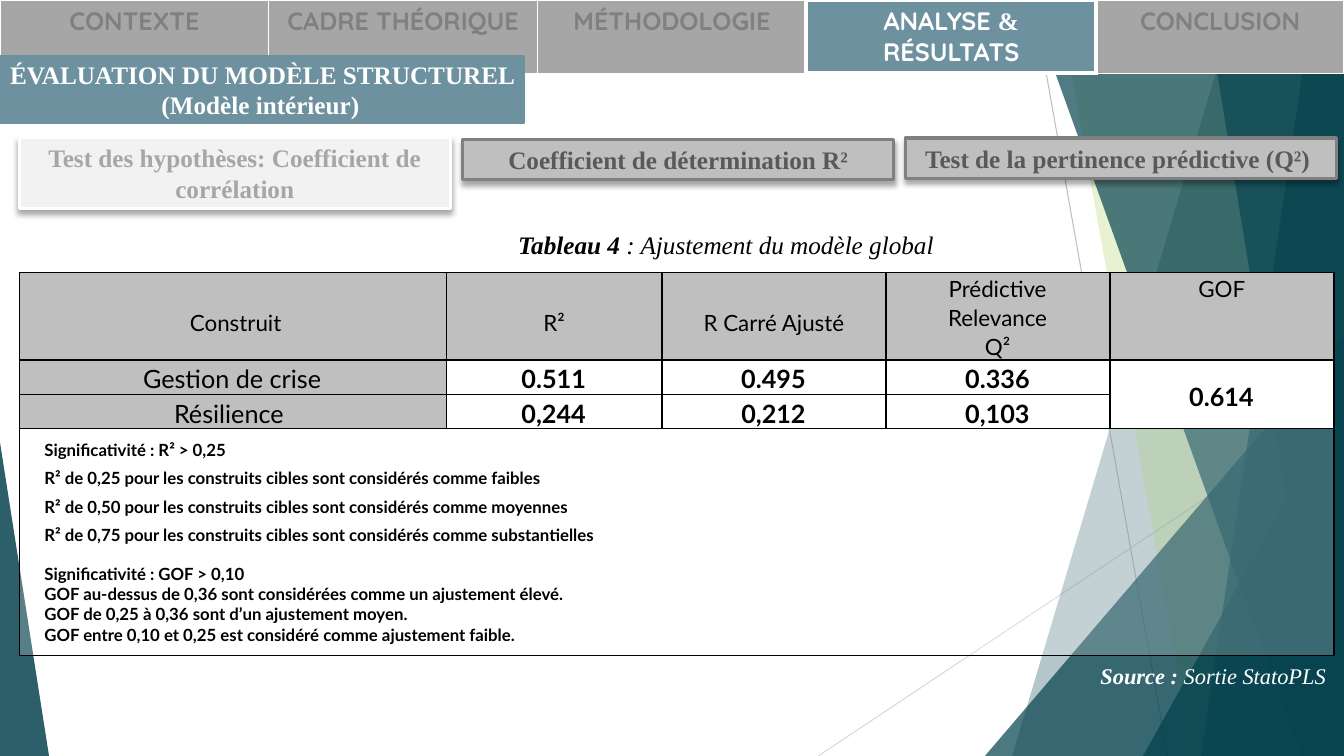
from collections import namedtuple

from lxml.etree import SubElement
from pptx import Presentation
from pptx.dml.color import RGBColor
from pptx.enum.shapes import MSO_CONNECTOR as Connector, MSO_SHAPE as Shape
from pptx.enum.text import MSO_ANCHOR as Anchor, MSO_AUTO_SIZE as AutoSize, PP_ALIGN as Align
from pptx.oxml.ns import qn
from pptx.util import Pt

Box = namedtuple("Box", "left top width height")

COLOURS = {
    "white": "FFFFFF", "black": "000000", "teal": "084450", "lime": "90C226",
    "slate": "6E91A0", "tab": "A6A6A6", "tab_text": "808080", "pale": "F2F2F2",
    "silver": "BFBFBF", "charcoal": "595959", "hairline": "D9D9D9",
}
SERIF, SANS, ROUNDED = "Times New Roman", "Lato", "Quicksand"
NUMBER_INSETS = (9.4, 1.4, 5.8, 0)


def rgb(name):
    return RGBColor.from_string(COLOURS[name])


def in_points(box):
    return [Pt(value) for value in box]


def write(frame, paragraphs, font=SERIF, size=18, colour="black", bold=False, italic=False,
          align=Align.LEFT, spacing=None, after=0):
    """Each paragraph is a string or a list of (text, overrides) pairs."""
    for index, content in enumerate(paragraphs):
        para = frame.paragraphs[0] if index == 0 else frame.add_paragraph()
        para.alignment = align
        para.space_before, para.space_after = Pt(0), Pt(after)
        if spacing:
            para.line_spacing = spacing
        spans = [(content, {})] if isinstance(content, str) else content
        for text, changes in spans:
            span = para.add_run()
            span.text = text
            span.font.name = changes.get("font", font)
            span.font.size = Pt(size)
            span.font.bold = changes.get("bold", bold)
            span.font.italic = italic
            span.font.color.rgb = rgb(colour)


def set_insets(target, left=7.2, top=3.6, right=7.2, bottom=3.6):
    target.margin_left, target.margin_top = Pt(left), Pt(top)
    target.margin_right, target.margin_bottom = Pt(right), Pt(bottom)


def paint(fill, properties, colour, alpha=100):
    fill.solid()
    fill.fore_color.rgb = rgb(colour)
    if alpha < 100:
        tint = properties.find(qn("a:solidFill"))[0]
        SubElement(tint, qn("a:alpha"), val=str(alpha * 1000))


def set_borders(cell, colour, **widths):
    properties = cell._tc.get_or_add_tcPr()
    for side in "LRTB":
        line = SubElement(properties, qn(f"a:ln{side}"), w=str(Pt(widths.get(side, 1))))
        solid = SubElement(line, qn("a:solidFill"))
        SubElement(solid, qn("a:srgbClr"), val=COLOURS[colour])


def add_grid(page, box, widths, heights):
    frame = page.shapes.add_table(len(heights), len(widths), *in_points(box))
    table = frame.table
    table.first_row = table.horz_banding = False
    for column, width in zip(table.columns, widths):
        column.width = Pt(width)
    for row, height in zip(table.rows, heights):
        row.height = Pt(height)
    return table


# Background facets
def draw_facets(page, box):
    right, bottom = box.left + box.width, box.top + box.height
    for start, end, colour in [((738, 0), (834, 540), "silver"),
                               ((960, 290), (584.5, 540), "hairline")]:
        line = page.shapes.add_connector(
            Connector.STRAIGHT, *[Pt(value) for value in (*start, *end)])
        line.line.color.rgb = rgb(colour)
        line.line.width = Pt(0.75)
        SubElement(line._element.spPr, qn("a:effectLst"))

    def finish(facet, colour, alpha):
        facet.shadow.inherit = False
        paint(facet.fill, facet._element.spPr, colour, alpha)
        facet.line.fill.background()

    def shard(top_x, bottom_x, colour, alpha):
        outline = page.shapes.build_freeform(Pt(top_x), Pt(box.top))
        outline.add_line_segments([(Pt(right), Pt(box.top)), (Pt(right), Pt(bottom)),
                                   (Pt(bottom_x), Pt(bottom))], close=True)
        finish(outline.convert_to_shape(), colour, alpha)

    def corner(left, top, width, apex, alpha):
        place = in_points(Box(left, top, width, bottom - top))
        facet = page.shapes.add_shape(Shape.ISOSCELES_TRIANGLE, *place)
        facet.adjustments[0] = apex
        finish(facet, "teal", alpha)

    shard(884, 723, "teal", 30)
    shard(756, 852, "lime", 20)
    corner(703.5, 240, right - 703.5, 1, 72)
    shard(735, 929.5, "teal", 70)
    shard(938, 858, "teal", 70)
    shard(861, 949, "teal", 65)
    corner(816.5, 283, right - 816.5, 1, 80)
    corner(box.left, 316, 35, 0, 85)


# Navigation bar
def draw_navigation(page, box, active):
    tabs = ["CONTEXTE", "CADRE THÉORIQUE", "MÉTHODOLOGIE",
            [("ANALYSE ", {}), ("& ", {"font": SERIF}), ("RÉSULTATS", {})], "CONCLUSION"]
    table = add_grid(page, box, [192, 192, 192, 207, 177], [box.height])
    for index, label in enumerate(tabs):
        cell = table.cell(0, index)
        chosen = index == active
        edge = 3 if chosen else 1
        set_borders(cell, "white", T=edge, B=edge,
                    L=3 if index in (active, active + 1) else 1,
                    R=3 if index in (active - 1, active) else 1)
        paint(cell.fill, cell._tc.tcPr, "slate" if chosen else "tab")
        write(cell.text_frame, [label], font=ROUNDED, bold=True, align=Align.CENTER,
              colour="white" if chosen else "tab_text")


# Slide title
def draw_title(page, box):
    title = page.shapes.title
    page.shapes._spTree.append(title._element)
    title.left, title.top, title.width, title.height = in_points(box)
    paint(title.fill, title._element.spPr, "slate")
    title.line.color.rgb = rgb("slate")
    title.line.width = Pt(1.5)
    frame = title.text_frame
    frame.word_wrap, frame.auto_size = True, AutoSize.NONE
    frame.vertical_anchor = Anchor.MIDDLE
    set_insets(frame, right=5)
    write(frame, ["ÉVALUATION DU MODÈLE STRUCTUREL", "(Modèle intérieur) "],
          colour="white", bold=True)
    frame.paragraphs[1].alignment = Align.CENTER


# Test headings
def draw_heading(page, box, text, fill="silver", line="tab_text", colour="charcoal"):
    heading = page.shapes.add_shape(Shape.RECTANGLE, *in_points(box))
    heading.shadow.inherit = False
    paint(heading.fill, heading._element.spPr, fill)
    heading.line.color.rgb = rgb(line)
    heading.line.width = Pt(2.25)
    effects = heading._element.spPr.find(qn("a:effectLst"))
    shadow = SubElement(effects, qn("a:outerShdw"), blurRad=str(Pt(4)), dist=str(Pt(3)),
                        dir="5400000", algn="t", rotWithShape="0")
    tint = SubElement(shadow, qn("a:srgbClr"), val=COLOURS["black"])
    SubElement(tint, qn("a:alpha"), val="35000")
    frame = heading.text_frame
    frame.word_wrap, frame.vertical_anchor = True, Anchor.MIDDLE
    write(frame, [text], colour=colour, bold=True, align=Align.CENTER)


# Model fit table
def draw_fit_table(page, box):
    rows = [
        [[" Construit"], ["R²"], ["R Carré Ajusté"],
         ["Prédictive ", "Relevance ", "Q² "], ["GOF "]],
        [["Gestion de crise "], ["0.511 "], ["0.495 "], ["0.336 "], ["0.614 "]],
        [["Résilience  "], ["0,244 "], ["0,212 "], ["0,103 "], []],
        [["Significativité : R² > 0,25",
          "R² de 0,25 pour les construits cibles sont considérés comme faibles",
          "R² de 0,50 pour les construits cibles sont considérés comme moyennes",
          "R² de 0,75 pour les construits cibles sont considérés comme substantielles",
          "Significativité : GOF > 0,10",
          "GOF au-dessus de 0,36 sont considérées comme un ajustement élevé.",
          "GOF de 0,25 à 0,36 sont d’ajustement moyen.".replace("d’", "d’un "),
          "GOF entre 0,10 et 0,25 est considéré comme ajustement faible."], [], [], [], []],
    ]
    table = add_grid(page, box, [305.2, 154, 160, 160, 160], [62.8, 24.5, 24.5, 162])
    table.cell(1, 4).merge(table.cell(2, 4))
    table.cell(3, 0).merge(table.cell(3, 4))
    for y, row in enumerate(rows):
        for x, lines in enumerate(row):
            cell = table.cell(y, x)
            header, notes = y == 0, y == 3
            set_borders(cell, "black", T=2 if y == 1 else 1, B=2 if header else 1)
            grey = header or (x == 0 and not notes)
            paint(cell.fill, cell._tc.tcPr, "silver" if grey else "white", 20 if notes else 100)
            if notes:
                set_insets(cell, 18, 0, 3.6, 0)
                style = {"size": 12, "bold": True}
            elif header and x < 3:
                set_insets(cell, 3.6, 0, 3.6, 0)
                style = {"size": 16, "align": Align.CENTER, "spacing": 1.5, "after": 6}
            else:
                set_insets(cell, *NUMBER_INSETS)
                style = {"size": 16 if header else 18, "bold": not grey,
                         "align": Align.CENTER, "spacing": 1.07}
            if notes or (header and x < 3) or cell.is_merge_origin:
                cell.vertical_anchor = Anchor.MIDDLE
            write(cell.text_frame, lines, font=SANS, **style)
    notes = table.cell(3, 0).text_frame.paragraphs
    for para in notes[:4]:
        para.space_after = Pt(6)
    notes[4].line_spacing = 1.5


# Caption and source line
def draw_label(page, box, lead, rest, size, colour):
    frame = page.shapes.add_textbox(*in_points(box)).text_frame
    frame.word_wrap = True
    set_insets(frame, right=0)
    write(frame, [[(lead, {"bold": True}), (rest, {})]], size=size, colour=colour, italic=True)


def main():
    deck = Presentation()
    deck.slide_width, deck.slide_height = Pt(960), Pt(540)
    page = deck.slides.add_slide(deck.slide_layouts[5])
    draw_facets(page, Box(0, 0, 960, 540))
    draw_navigation(page, Box(0, 0, 960, 52), active=3)
    draw_title(page, Box(0, 40.3, 374.4, 47.5))
    draw_fit_table(page, Box(13.7, 194.4, 939.2, 273.8))
    draw_label(page, Box(363, 160, 417, 29), "Tableau 4 ", ": Ajustement du modèle global",
               18, "black")
    draw_label(page, Box(779, 469.5, 181, 26.6), "Source : ", "Sortie StatoPLS", 16, "white")
    draw_heading(page, Box(13.7, 98, 308, 51), "Test des hypothèses: Coefficient de corrélation",
                 fill="pale", line="white", colour="tab")
    draw_heading(page, Box(330.5, 99.4, 308, 29), "Coefficient de détermination R²")
    draw_heading(page, Box(646.6, 98.6, 308, 29), "Test de la pertinence prédictive (Q²) ")
    deck.save("out.pptx")


if __name__ == "__main__":
    main()
